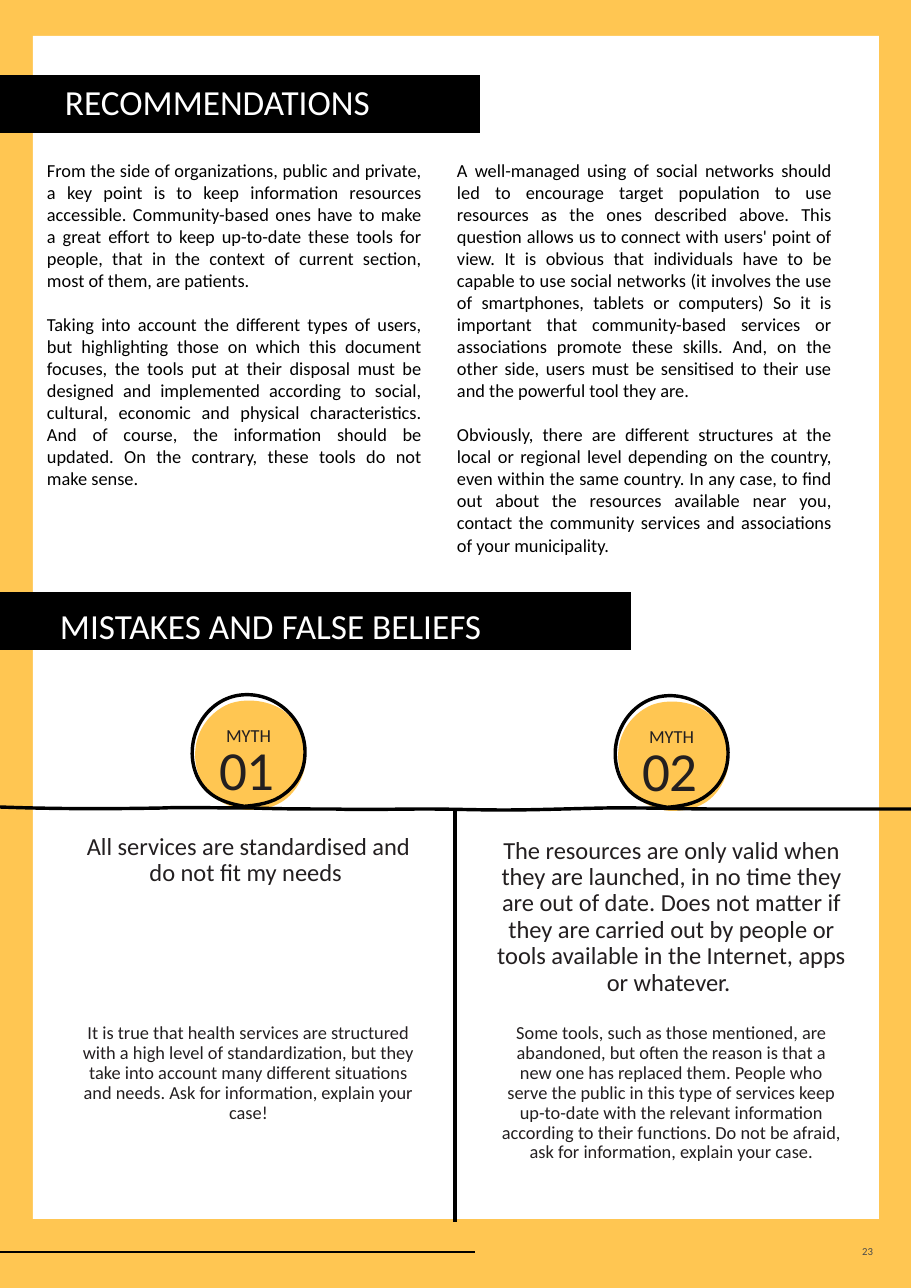
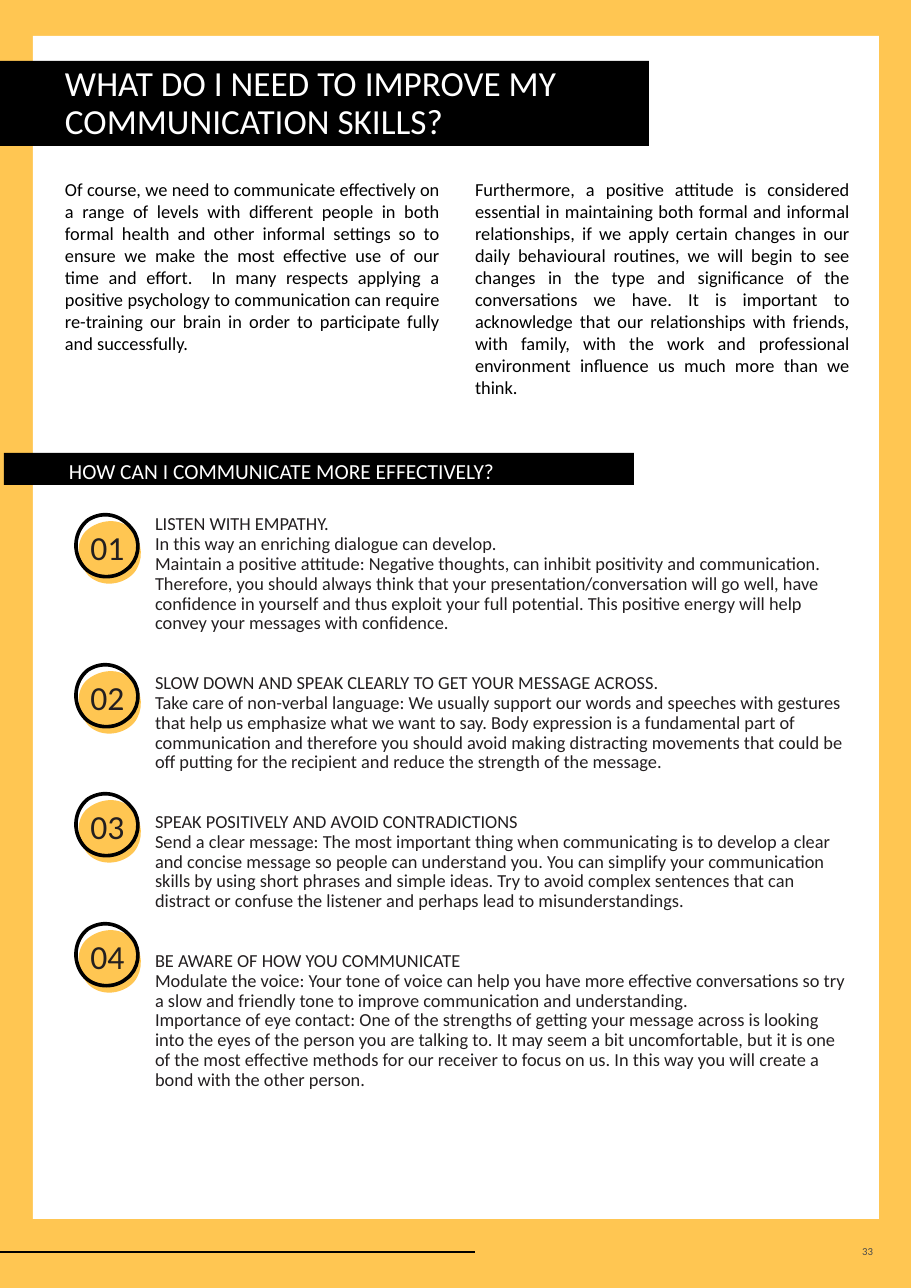
from lxml.etree import SubElement
from pptx import Presentation
from pptx.dml.color import RGBColor
from pptx.enum.shapes import MSO_CONNECTOR, MSO_SHAPE
from pptx.enum.text import MSO_ANCHOR, MSO_AUTO_SIZE, PP_ALIGN
from pptx.oxml.ns import qn
from pptx.util import Pt

PX = 8298  # EMU in one px
PAGE_W, PAGE_H = 911, 1288
FONT = "Calibri"
COLOURS = {"yellow": "FFC652", "black": "000000", "white": "FFFFFF",
           "ink": "231F20", "grey": "4B4B4B"}
COLUMN_W, COLUMN_STEP = 375, 410

# Hand-drawn outlines: a start point, then (control, control, end) per curve
MYTH_BLOB = [(22, 101),
             ((30, 109), (44, 115), (57, 116)), ((68, 116), (79, 115), (88, 110)),
             ((105, 102), (117, 81), (116, 60)), ((115, 42), (105, 24), (91, 15)),
             ((76, 6), (55, 4), (39, 10)), ((22, 17), (9, 33), (6, 51)),
             ((3, 69), (8, 88), (22, 101))]
MYTH_RING = [(45, 113),
             ((60, 112), (77, 111), (90, 103)), ((104, 94), (114, 81), (115, 61)),
             ((117, 23), (81, -6), (45, 2)), ((11, 10), (-7, 50), (7, 82)),
             ((17, 104), (37, 110), (59, 113))]
TIP_BLOB = [(60, 20),
            ((48, 7), (27, 9), (14, 21)), ((2, 33), (6, 55), (17, 66)),
            ((30, 78), (51, 75), (62, 63)), ((72, 51), (71, 32), (60, 20))]
TIP_RING = [(11, 56),
            ((21, 69), (42, 70), (54, 60)), ((67, 51), (70, 31), (60, 19)),
            ((49, 5), (32, 0), (16, 10)), ((2, 21), (0, 42), (11, 56))]
WAVE = [(0, 807),
        ((54, 809), (108, 809), (162, 808)), ((184, 807), (212, 808), (253, 808)),
        ((281, 809), (308, 809), (335, 809)), ((356, 810), (400, 809), (425, 809)),
        ((451, 809), (477, 810), (504, 810)), ((548, 810), (612, 807), (637, 808)),
        ((662, 808), (688, 809), (714, 809)), ((735, 809), (815, 809), (821, 809)),
        ((846, 809), (870, 809), (895, 809)), ((900, 809), (906, 809), (911, 809))]

# Wording
RECOMMENDATIONS = [
    ["From the side of organizations, public and private, a key point is to keep information resources accessible. Community-based ones have to make a great effort to keep up-to-date these tools for people, that in the context of current section, most of them, are patients.",
     "Taking into account the different types of users, but highlighting those on which this document focuses, the tools put at their disposal must be designed and implemented according to social, cultural, economic and physical characteristics. And of course, the information should be updated. On the contrary, these tools do not make sense."],
    ["A well-managed using of social networks should led to encourage target population to use resources as the ones described above. This question allows us to connect with users' point of view. It is obvious that individuals have to be capable to use social networks (it involves the use of smartphones, tablets or computers) So it is important that community-based services or associations promote these skills. And, on the other side, users must be sensitised to their use and the powerful tool they are.",
     "Obviously, there are different structures at the local or regional level depending on the country, even within the same country. In any case, to find out about the resources available near you, contact the community services and associations of your municipality."],
]
SKILLS = [
    ["Of course, we need to communicate effectively on a range of levels with different people in both formal health and other informal settings so to ensure we make the most effective use of our time and effort.  In many respects applying a positive psychology to communication can require re-training our brain in order to participate fully and successfully."],
    ["Furthermore, a positive attitude is considered essential in maintaining both formal and informal relationships, if we apply certain changes in our daily behavioural routines, we will begin to see changes in the type and significance of the conversations we have. It is important to acknowledge that our relationships with friends, with family, with the work and professional environment influence us much more than we think."],
]
# number, centre x, badge y, claim y, claim width, claim, answer
MYTHS = [
    ("01", 248, 694, 834, 337, "All services are standardised and do not fit my needs ",
     "It is true that health services are structured with a high level of standardization, but they take into account many different situations and needs. Ask for information, explain your case!"),
    ("02", 671, 695, 838, 365,
     "The resources are only valid when they are launched, in no time they are out of date. Does not matter if they are carried out by people or tools available in the Internet, apps or whatever. ",
     "Some tools, such as those mentioned, are abandoned, but often the reason is that a new one has replaced them. People who serve the public in this type of services keep up-to-date with the relevant information according to their functions. Do not be afraid, ask for information, explain your case."),
]
# number, badge y, lines (the first one is the heading)
TIPS = [
    ("01", 510, ["LISTEN WITH EMPATHY.",
                 "In this way an enriching dialogue can develop.",
                 "Maintain a positive attitude: Negative thoughts, can inhibit positivity and communication. Therefore, you should always think that your presentation/conversation will go well, have confidence in yourself and thus exploit your full potential. This positive energy will help convey your messages with confidence."]),
    ("02", 660, ["SLOW DOWN AND SPEAK CLEARLY TO GET YOUR MESSAGE ACROSS.",
                 "Take care of non-verbal language: We usually support our words and speeches with gestures that help us emphasize what we want to say. Body expression is a fundamental part of communication and therefore you should avoid making distracting movements that could be off putting for the recipient and reduce the strength of the message."]),
    ("03", 789, ["SPEAK POSITIVELY AND AVOID CONTRADICTIONS",
                 "Send a clear message: The most important thing when communicating is to develop a clear and concise message so people can understand you. You can simplify your communication skills by using short phrases and simple ideas. Try to avoid complex sentences that can distract or confuse the listener and perhaps lead to misunderstandings."]),
    ("04", 919, ["BE AWARE OF HOW YOU COMMUNICATE",
                 "Modulate the voice: Your tone of voice can help you have more effective conversations so try a slow and friendly tone to improve communication and understanding.",
                 "Importance of eye contact: One of the strengths of getting your message across is looking into the eyes of the person you are talking to. It may seem a bit uncomfortable, but it is one of the most effective methods for our receiver to focus on us. In this way you will create a bond with the other person."]),
]


def colour(name):
    return RGBColor.from_string(COLOURS[name])


def emu(*lengths):
    return [round(length * PX) for length in lengths]


def paint(shape, fill=None, line=None, width=2.25):
    shape.shadow.inherit = False
    if fill:
        shape.fill.solid()
        shape.fill.fore_color.rgb = colour(fill)
    else:
        shape.fill.background()
    if line:
        shape.line.color.rgb = colour(line)
        shape.line.width = Pt(width)
    else:
        shape.line.fill.background()


def write(shape, texts, size, ink="ink", align=PP_ALIGN.LEFT, spacing=0.9,
          gaps=(), anchor=MSO_ANCHOR.TOP, left=0, top=0):
    """Fill a shape with paragraphs; gaps maps a paragraph index to points before it."""
    frame = shape.text_frame
    frame.word_wrap = True
    frame.auto_size = MSO_AUTO_SIZE.NONE
    frame.vertical_anchor = anchor
    frame.margin_left, frame.margin_top = emu(left, top)
    frame.margin_right = frame.margin_bottom = 0
    gaps = dict(gaps)
    for index, text in enumerate(texts):
        para = frame.paragraphs[0] if index == 0 else frame.add_paragraph()
        para.text = text
        properties = para._p.get_or_add_pPr()
        properties.set("marL", "0")
        properties.set("indent", "0")
        SubElement(properties, qn("a:buNone"))
        para.alignment = align
        para.line_spacing = spacing
        para.space_before = Pt(gaps.get(index, 0))
        para.font.name = FONT
        para.font.size = Pt(size)
        para.font.color.rgb = colour(ink)


def text_box(shapes, box, texts, size, **style):
    write(shapes.add_textbox(*emu(*box)), texts, size, **style)


def place(shape, box):
    shape.left, shape.top, shape.width, shape.height = emu(*box)


def rectangle(page, box, fill):
    shape = page.shapes.add_shape(MSO_SHAPE.RECTANGLE, *emu(*box))
    paint(shape, fill)
    return shape


def straight_line(page, start, end, width):
    line = page.shapes.add_connector(MSO_CONNECTOR.STRAIGHT, *emu(*start, *end))
    line.line.color.rgb = colour("black")
    line.line.width = Pt(width)
    SubElement(line.element.spPr, qn("a:effectLst"))
    return line


def extent(values, steps=20):
    """Least and greatest value that a chain of cubic curves reaches on one axis."""
    reached = [((1 - t)**3 * a + 3 * (1 - t)**2 * t * b + 3 * (1 - t) * t * t * c + t**3 * d)
               for a, b, c, d in zip(values[::3], values[1::3], values[2::3], values[3::3])
               for t in (step / steps for step in range(steps + 1))]
    return round(min(reached)), round(max(reached))


def curve(shapes, outline, x=0, y=0, closed=False, **look):
    """Draw a chain of cubic curves whose box fits the drawn outline."""
    points = [outline[0]] + [point for part in outline[1:] for point in part]
    points = [tuple(emu(x + dx, y + dy)) for dx, dy in points]
    builder = shapes.build_freeform(*points[0], scale=1.0)
    builder.add_line_segments(points[1:], close=closed)
    shape = builder.convert_to_shape()
    # Join every three straight steps into one cubic curve
    steps = shape.element.xpath(".//a:lnTo")
    for index, step in enumerate(steps):
        if index % 3 == 0:
            cubic = step
            cubic.tag = qn("a:cubicBezTo")
        else:
            cubic.append(step[0])
            step.getparent().remove(step)
    (left, right), (top, bottom) = (extent(axis) for axis in zip(*points))
    shape.left, shape.top, shape.width, shape.height = left, top, right - left, bottom - top
    outline_xml = shape.element.xpath(".//a:pathLst/*")[0]
    outline_xml.set("w", str(right - left))
    outline_xml.set("h", str(bottom - top))
    for node, (px, py) in zip(shape.element.xpath(".//a:pathLst//a:pt"), points):
        node.set("x", str(px - left))
        node.set("y", str(py - top))
    paint(shape, **look)


def bar(shape, text, size, left=65, drop=0):
    """Black heading band; drop pushes its text below the middle."""
    paint(shape, "black")
    write(shape, [text], size, "white", anchor=MSO_ANCHOR.MIDDLE, left=left, top=drop)


def badge(page, x, y, blob, ring, ring_width, labels):
    """Yellow blob, black ring and centred labels given as (box, text, size)."""
    shapes = page.shapes.add_group_shape().shapes
    curve(shapes, blob, x, y, closed=True, fill="yellow")
    curve(shapes, ring, x, y, closed=ring[0] == ring[-1][-1], line="black", width=ring_width)
    for (dx, dy, width, height), text, size in labels:
        text_box(shapes, (x + dx, y + dy, width, height), [text], size,
                 align=PP_ALIGN.CENTER, anchor=MSO_ANCHOR.MIDDLE)


def shared_frame(layout, page):
    """Put the yellow border, white sheet and footer rule on the layout."""
    parts = [rectangle(page, (0, 0, PAGE_W, PAGE_H), "yellow"),
             rectangle(page, (33, 36, 846, 1183), "white"),
             straight_line(page, (0, 1252), (475, 1252), 1.5)]
    for index, part in enumerate(parts):
        part.element.xpath("./*/p:cNvPr")[0].set("id", str(100 + index))
        layout.shapes.element.insert(2 + index, part.element)


def new_page(deck, layout, title, title_box, title_drop, columns, column_box, number):
    page = deck.slides.add_slide(layout)
    heading, *bodies = page.placeholders
    place(heading, title_box)
    bar(heading, title, 23, drop=title_drop)
    x, y, height = column_box
    for index, (body, texts) in enumerate(zip(bodies, columns)):
        place(body, (x + index * COLUMN_STEP, y, COLUMN_W, height))
        write(body, texts, 12, "black", PP_ALIGN.JUSTIFY, 1.0, gaps={1: 14.4})
    text_box(page.shapes, (765, 1242, 108, 18), [number], 7, ink="grey",
             align=PP_ALIGN.RIGHT, spacing=1.0, anchor=MSO_ANCHOR.MIDDLE)
    return page


def add_myths(page):
    bar(rectangle(page, (0, 592, 631, 58), "black"), "MISTAKES AND FALSE BELIEFS", 23, 60, 14)
    straight_line(page, (455, 810), (455, 1222), 2.25)
    for number, centre, badge_y, claim_y, claim_w, claim, answer in MYTHS:
        badge(page, centre - 58, badge_y, MYTH_BLOB, MYTH_RING, 2.25,
              [((0, 41, 114, 75), number, 36), ((3, 30, 111, 26), "MYTH", 12)])
        for y, width, height, text, size in ((claim_y, claim_w, 160, claim, 16),
                                             (1024, 345, 170, answer, 12)):
            text_box(page.shapes, (centre - width // 2, y, width, height), [text], size,
                     align=PP_ALIGN.CENTER)
    curve(page.shapes, WAVE, line="black")


def add_tips(page):
    bar(rectangle(page, (4, 453, 630, 32), "black"),
        "HOW CAN I COMMUNICATE MORE EFFECTIVELY?", 14, drop=8)
    lines, gaps = [], {}
    for number, y, tip in TIPS:
        badge(page, 72, y, TIP_BLOB, TIP_RING, 2.38, [((1, 18, 69, 44), number, 22)])
        if lines:
            gaps[len(lines)] = 26
        lines += tip
    text_box(page.shapes, (155, 515, 694, 590), lines, 12, gaps=gaps)


def main():
    deck = Presentation()
    deck.slide_width, deck.slide_height = emu(PAGE_W, PAGE_H)
    layout = deck.slide_layouts.get_by_name("Two Content")

    # Recommendations and myths
    page = new_page(deck, layout, "RECOMMENDATIONS", (0, 75, 480, 58), 0,
                    RECOMMENDATIONS, (47, 159, 400), "23")
    shared_frame(layout, page)
    add_myths(page)

    # Communication skills
    page = new_page(deck, layout, "WHAT DO I NEED TO IMPROVE MY COMMUNICATION SKILLS?",
                    (0, 61, 649, 85), 2, SKILLS, (65, 178, 225), "33")
    add_tips(page)

    deck.save("out.pptx")


if __name__ == "__main__":
    main()
